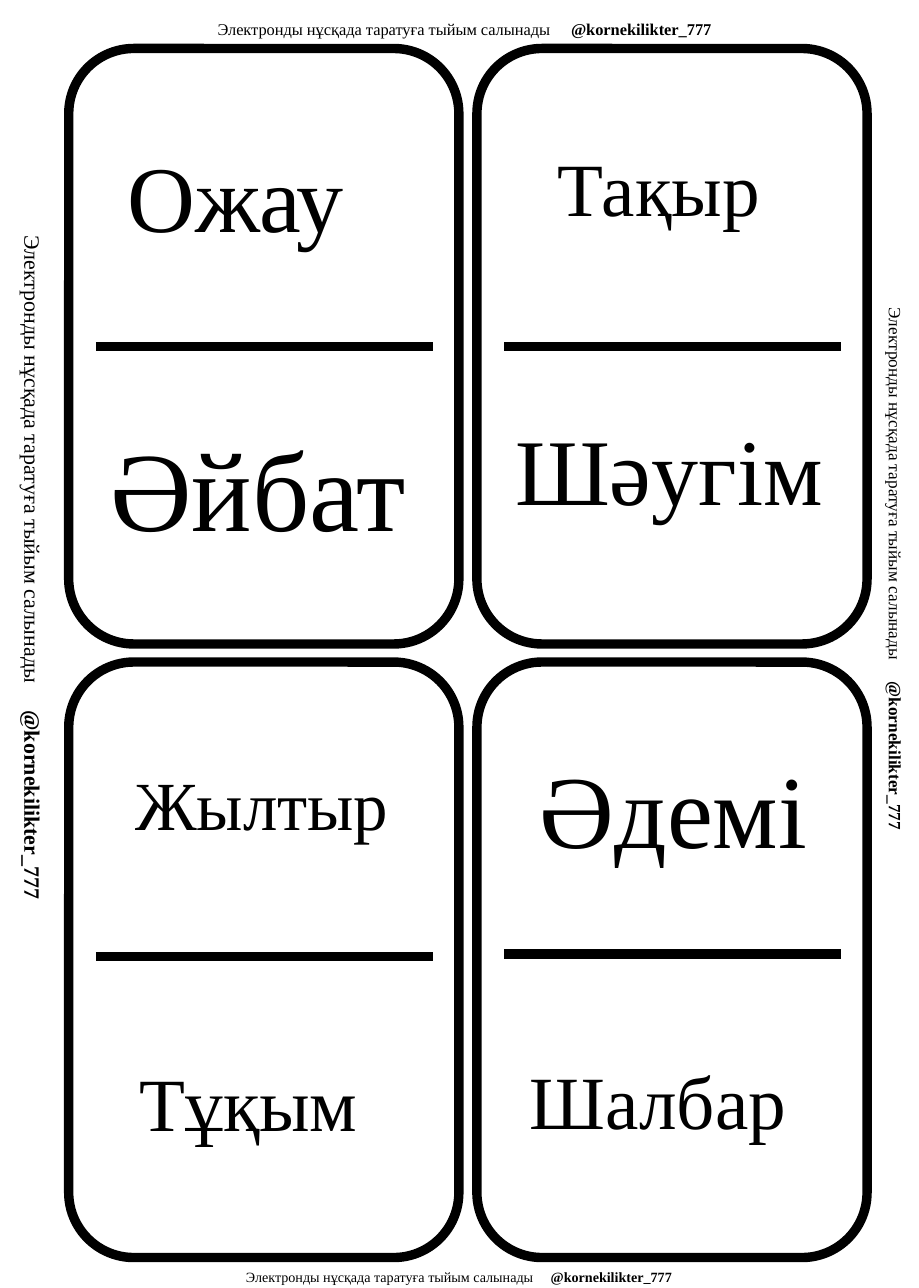
from pptx import Presentation
from pptx.dml.color import RGBColor
from pptx.enum import shapes, text
from pptx.oxml import xmlchemy
from pptx.util import Pt

COLORS = {"ink": "000000", "paper": "FFFFFF"}
INK = RGBColor.from_string(COLORS["ink"])
PAPER = RGBColor.from_string(COLORS["paper"])

deck = Presentation()
deck.slide_width, deck.slide_height = Pt(586.8), Pt(822.24)
page = deck.slides.add_slide(deck.slide_layouts[6])
page.background.fill.solid()
page.background.fill.fore_color.rgb = PAPER


def add_text_frame(left, top, width, height, rotation=0):
    box = page.shapes.add_textbox(Pt(left), Pt(top), Pt(width), Pt(height))
    box.rotation = rotation
    frame = box.text_frame
    frame.word_wrap = True
    frame.auto_size = text.MSO_AUTO_SIZE.SHAPE_TO_FIT_TEXT
    return frame


def add_run(paragraph, wording, size, bold=False):
    run = paragraph.add_run()
    run.text = wording
    run.font.color.rgb = INK
    font_format = {"name": "Times New Roman", "size": Pt(size), "bold": bold}
    for attribute, value in font_format.items():
        setattr(run.font, attribute, value)
    return run


# Domino cards, two by two, each with a divider
CARD_WIDTH, CARD_HEIGHT = 249.12, 380.16
DIVIDER_INSET, DIVIDER_LENGTH = 17.28, 215.28
card_rows = [
    (30.96, (221.04, 221.04)),
    (422.64, (610.56, 609.12)),
]
for card_top, divider_heights in card_rows:
    for card_left, divider_y in zip((43.92, 304.56), divider_heights):
        card = page.shapes.add_shape(
            shapes.MSO_SHAPE.ROUNDED_RECTANGLE,
            Pt(card_left), Pt(card_top), Pt(CARD_WIDTH), Pt(CARD_HEIGHT))
        card.shadow.inherit = False
        card.fill.solid()
        card.fill.fore_color.rgb = PAPER

        divider_left = card_left + DIVIDER_INSET
        divider = page.shapes.add_connector(
            shapes.MSO_CONNECTOR.STRAIGHT,
            Pt(divider_left), Pt(divider_y),
            Pt(divider_left + DIVIDER_LENGTH), Pt(divider_y))
        divider_format = divider._element.spPr
        divider_format.append(xmlchemy.OxmlElement("a:effectLst"))

        for outline in (card.line, divider.line):
            outline.color.rgb = INK
            outline.width = Pt(6)

# Words on the cards: wording, size, left, top, width, height
words = [
    ("Ожау", 60, 74.16, 84.96, 204.48, 79.92),
    ("Тақыр", 48, 349.2, 86.4, 204.48, 65.52),
    ("Әйбат", 72, 63.36, 263.52, 293.04, 94.32),
    ("Шәугім", 60, 321.84, 259.2, 236.16, 79.92),
    ("Жылтыр", 44, 79.2, 482.4, 217.44, 60.48),
    ("Әдемі", 66, 337.68, 472.32, 191.52, 87.12),
    ("Тұқым", 48, 82.08, 671.04, 215.28, 65.52),
    ("Шалбар", 48, 331.2, 669.6, 249.12, 65.52),
]
for word, size, *place in words:
    add_run(add_text_frame(*place).paragraphs[0], word, size)

# Copyright notices along the four margins: size, left, top, width, height, rotation
notices = [
    (10.5, 115.2, 8.64, 362.88, 20.16, 0),
    (9, 111.6, 806.4, 362.88, 18, 0),
    (14, -213.84, 349.92, 469.44, 24.48, 90),
    (11, 390.24, 352.8, 362.88, 20.88, 90),
]
for size, *place in notices:
    notice = add_text_frame(*place).paragraphs[0]
    notice.alignment = text.PP_ALIGN.CENTER
    add_run(notice, "Электронды нұсқада таратуға тыйым салынады", size)
    # One space, widened by one em of character spacing
    gap = add_run(notice, " ", size)
    gap._r.get_or_add_rPr().set("spc", str(int(size * 100)))
    add_run(notice, "@kornekilikter_777", size, bold=True)

deck.save("out.pptx")
